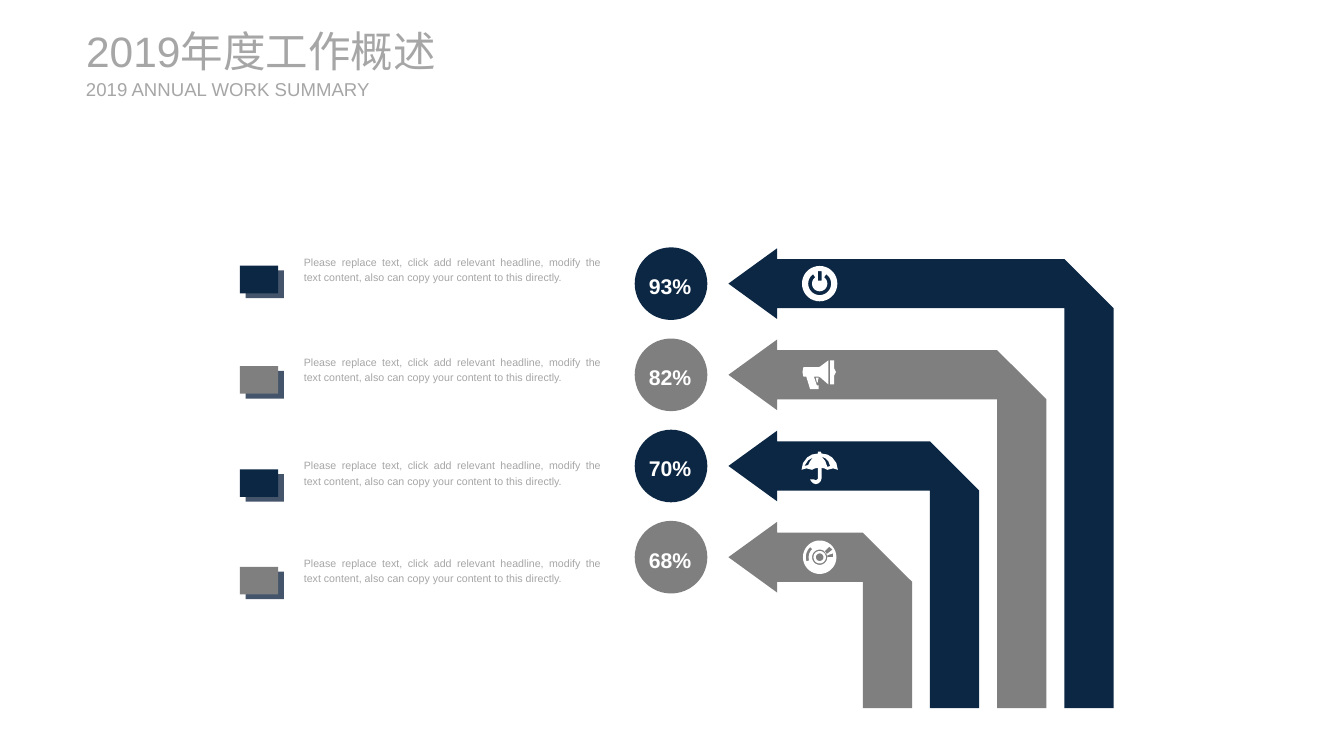
"""Build the annual work summary slide with four bent arrows."""
from dataclasses import dataclass
from math import cos, radians, sin

from pptx import Presentation
from pptx.dml.color import RGBColor as Rgb
from pptx.enum.shapes import MSO_SHAPE as Kind
from pptx.enum.text import MSO_ANCHOR as Anchor, MSO_AUTO_SIZE as Fit, PP_ALIGN as Align
from pptx.util import Inches, Pt

NAVY = Rgb(0x0C, 0x27, 0x44)
GREY = Rgb(0x7F, 0x7F, 0x7F)
SLATE = Rgb(0x44, 0x54, 0x6A)
PALE = Rgb(0xA6, 0xA6, 0xA6)
WHITE = Rgb(0xFF, 0xFF, 0xFF)

WIDTH, HEIGHT = Inches(14.06), Inches(7.91)
COLS, ROWS = 140.6, 79.1
FONT = "Arial"
NOTE = ("Please replace text, click add relevant headline, modify the text content, "
        "also can copy your content to this directly.")

TOP, PITCH = 29.68, 9.54
TIP, NECK, HEAD, BAND, FOOT = 76.2, 81.3, 3.7, 5.15, 74.1
EDGE, STEP = 116.5, 7.03
DISC, DISC_X = 7.6, 66.4
ICON_X = 85.75

Point = tuple[float, float]
Loop = list[Point]


@dataclass(frozen=True)
class Style:
    size: float
    color: Rgb
    bold: bool = False
    align: Align | None = None
    space: float | None = None
    wrap: bool = True
    flush: bool = False


@dataclass(frozen=True)
class Item:
    rate: str
    color: Rgb
    note_y: float
    icon: list[Loop]


def arc(rad: float, start: float = 0, end: float = 360) -> Loop:
    count = 36
    turns = [radians(start + (end - start) * i / count) for i in range(count + 1)]
    return [(rad * cos(t), rad * sin(t)) for t in turns]


def band(far: float, near: float, start: float, end: float) -> Loop:
    return arc(far, start, end) + arc(near, end, start)


POWER = [arc(1.85), [(-.2, -1.3), (.2, -1.3), (.2, -.3), (-.2, -.3)],
         band(1.2, .8, -55, 235)]
HORN = [
    [(-1.7, -.8), (-.1, -.8), (.1, -.9), (.9, -1.5), (.9, 1), (.1, .3), (-.1, .2),
     (-.6, .2), (-.3, 1.1), (-.1, 1.1), (-.1, 1.5), (-1, 1.5), (-1.4, .2), (-1.7, .2),
     (-1.8, -.3)],
    [(1.5, -.7), (1.7, -.3), (1.5, .1), (1.5, 1), (1.1, 1), (1.1, -1.5), (1.5, -1.5)],
    [(-.1, .3), (-.4, .3), (-.3, .8), (-.2, .8), (-.2, .6)],
]
BROLLY = [
    [(-1.9, .4), (-1.75, -.3), (-1.3, -.9), (-.8, -1.2), (-.2, -1.3), (-.2, -1.5),
     (.1, -1.5), (.2, -1.3), (.8, -1.2), (1.3, -.9), (1.75, -.3), (1.9, .4),
     (1.4, .25), (.8, .4), (.5, .25), (.2, .2), (.2, 1.3), (.1, 1.6), (-.1, 1.8),
     (-.4, 1.9), (-.7, 1.8), (-.9, 1.6), (-1, 1.4), (-.6, 1.4), (-.4, 1.5),
     (-.2, 1.35), (-.2, .2), (-.5, .25), (-.8, .4), (-1.4, .25)],
    [(.8, .1), (1.1, 0), (.9, -.5), (.6, -.8), (.2, -1), (.6, -.5)],
    [(-1.6, 0), (-1.2, -.1), (-1, -.5), (-.7, -.9), (-1.2, -.6)],
]
RECORD = [
    arc(1.75), arc(.8), arc(.65), arc(.4), band(1.45, 1.15, 163, 227),
    [(.5, -.6), (1, -1.1), (1.35, -.8), (.7, -.3)],
    [(.8, -.2), (1.4, -.4), (1.4, 0), (.8, 0)],
]

ITEMS = [
    Item("93%", NAVY, 26, POWER),
    Item("82%", GREY, 36.5, HORN),
    Item("70%", NAVY, 47.3, BROLLY),
    Item("68%", GREY, 57.5, RECORD),
]

RATE = Style(16, WHITE, bold=True, align=Align.JUSTIFY, space=1.2, wrap=False)
BODY = Style(8, PALE, align=Align.JUSTIFY, space=1.2)
TITLE = Style(32, PALE, flush=True)
SUB = Style(14, PALE, flush=True)


def col(x: float) -> int:
    return round(WIDTH * x / COLS)


def row(y: float) -> int:
    return round(HEIGHT * y / ROWS)


def paint(shape, color: Rgb) -> None:
    shape.shadow.inherit = False
    shape.fill.solid()
    shape.fill.fore_color.rgb = color
    shape.line.fill.background()


def block(pen, kind: Kind, x: float, y: float, w: float, h: float, color: Rgb) -> None:
    paint(pen.add_shape(kind, col(x), row(y), col(w), row(h)), color)


def trace(pen, loops: list[Loop], x: float, y: float, color: Rgb) -> None:
    paths = [[(col(x + dx), row(y + dy)) for dx, dy in loop] for loop in loops]
    form = pen.build_freeform(*paths[0][0])
    form.add_line_segments(paths[0][1:])
    for path in paths[1:]:
        form.move_to(*path[0])
        form.add_line_segments(path[1:])
    paint(form.convert_to_shape(), color)


def write(pen, text: str, x: float, y: float, w: float, h: float, style: Style) -> None:
    frame = pen.add_textbox(col(x), row(y), col(w), row(h)).text_frame
    frame.word_wrap = style.wrap
    frame.auto_size = Fit.SHAPE_TO_FIT_TEXT
    if style.flush:
        frame.margin_left = frame.margin_right = 0
        frame.margin_top = frame.margin_bottom = 0
        frame.vertical_anchor = Anchor.MIDDLE
    para = frame.paragraphs[0]
    para.alignment = style.align
    para.line_spacing = style.space
    run = para.add_run()
    run.text = text
    font = run.font
    font.name, font.size, font.bold = FONT, Pt(style.size), style.bold
    font.color.rgb = style.color


def arrow(y: float, edge: float) -> Loop:
    half, side = BAND / 2, edge - BAND
    return [(TIP, y), (NECK, y - HEAD), (NECK, y - half), (side, y - half),
            (edge, y + half), (edge, FOOT), (side, FOOT), (side, y + half),
            (NECK, y + half), (NECK, y + HEAD)]


def draw(pen, item: Item, rank: int) -> None:
    y = TOP + rank * PITCH
    block(pen, Kind.OVAL, DISC_X, y - DISC / 2, DISC, DISC, item.color)
    write(pen, item.rate, DISC_X + .5, y - 2.1, 6.5, 4.2, RATE)
    trace(pen, [arrow(y, EDGE - rank * STEP)], 0, 0, item.color)
    trace(pen, item.icon, ICON_X, y, WHITE)
    block(pen, Kind.RECTANGLE, 25.7, item.note_y + 2.3, 4, 2.9, SLATE)
    block(pen, Kind.RECTANGLE, 25.1, item.note_y + 1.8, 4, 2.9, item.color)
    write(pen, NOTE, 30.8, item.note_y, 33.1, 4.1, BODY)


def main() -> None:
    deck = Presentation()
    deck.slide_width, deck.slide_height = WIDTH, HEIGHT
    pen = deck.slides.add_slide(deck.slide_layouts[6]).shapes
    for rank, item in enumerate(ITEMS):
        draw(pen, item, rank)
    write(pen, "2019年度工作概述", 9, 2.6, 43.2, 5.4, TITLE)
    write(pen, "2019 ANNUAL WORK SUMMARY", 9, 8.1, 30.7, 2.4, SUB)
    deck.save("out.pptx")


if __name__ == "__main__":
    main()
